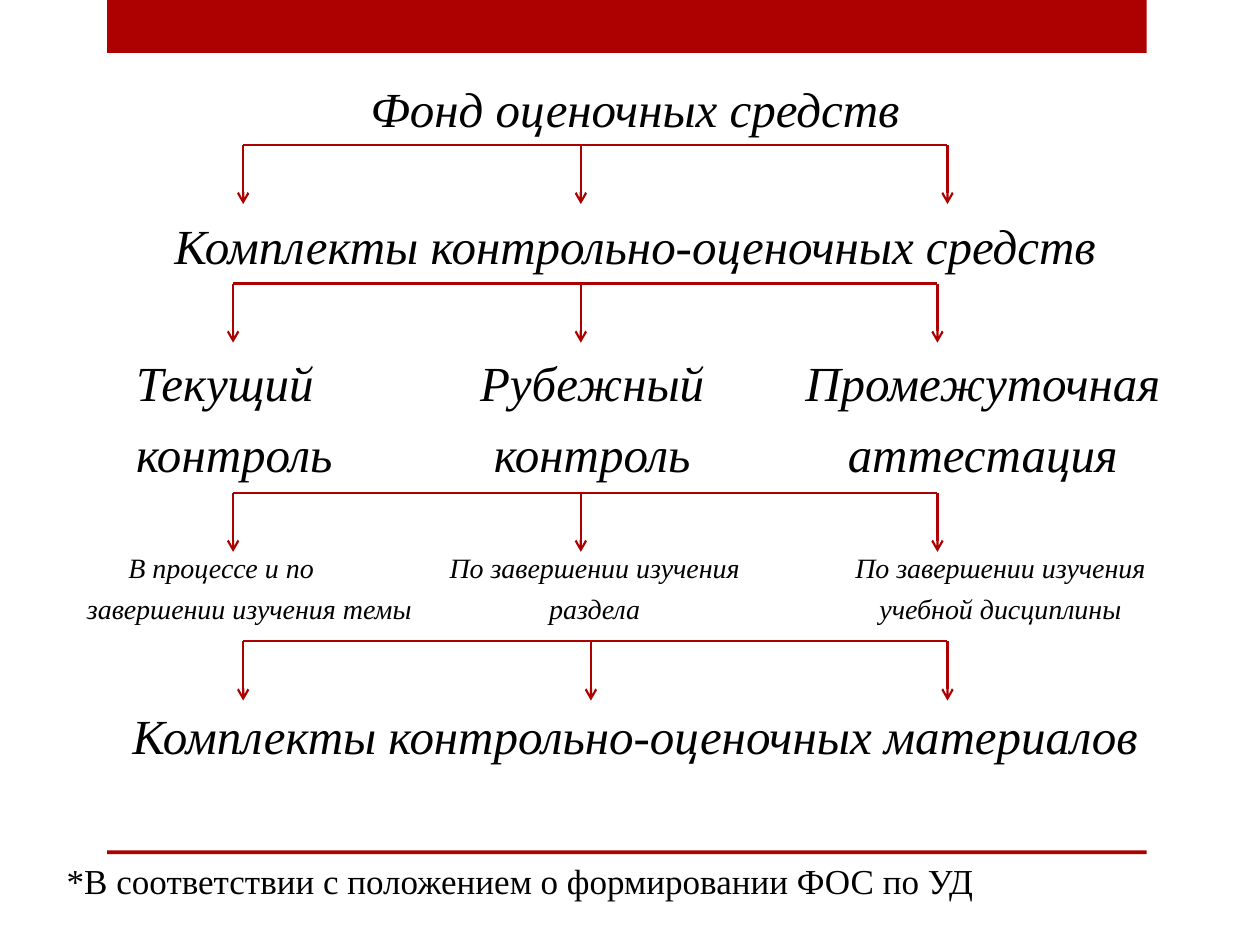
from lxml.etree import SubElement
from pptx import Presentation
from pptx.dml.color import RGBColor
from pptx.enum.shapes import MSO_CONNECTOR, MSO_SHAPE
from pptx.enum.text import PP_ALIGN
from pptx.oxml import parse_xml
from pptx.oxml.ns import nsdecls, qn
from pptx.util import Inches, Pt

RED = RGBColor(0xAD, 0x01, 0x01)
BLACK = RGBColor(0, 0, 0)
FONT = "Times New Roman"
LARGE, SMALL, NOTE = 28, 16, 20

# Grid of 100 columns by 75 rows
COLS, ROWS = 100, 75
CELL = Inches(0.1)

TEXT_SHADOW = (
    f'<a:effectLst {nsdecls("a")}>'
    '<a:outerShdw blurRad="38100" dist="38100" dir="2700000" algn="tl">'
    '<a:srgbClr val="000000"><a:alpha val="43000"/></a:srgbClr>'
    '</a:outerShdw></a:effectLst>'
)

# Headings: text, centre column, top row
HEADINGS = [
    ("Фонд оценочных средств", 50.4, 6.2),
    ("Комплекты контрольно-оценочных средств", 50.4, 17.1),
    ("Комплекты контрольно-оценочных материалов", 50.4, 56),
]

# Arrow trees: top row, columns of the three branches
TREES = [
    (11.5, (19.3, 46.1, 75.2)),
    (22.5, (18.5, 46.1, 74.4)),
    (39.1, (18.5, 46.1, 74.4)),
    (50.9, (19.3, 46.9, 75.2)),
]
BRANCH = 4.7


def grid(n):
    return round(n * CELL)


def add_text(slide, text, left, top, width, size=LARGE, italic=True,
             align=PP_ALIGN.CENTER, gap=0, indent=0, shadow=False):
    """Place text with its top left at a grid point; each line is a paragraph."""
    lines = text.split("\n")
    height = len(lines) * (size * 1.15 + gap) / 7.2
    box = slide.shapes.add_textbox(*map(grid, (left, top, width, height)))
    tf = box.text_frame
    tf.word_wrap = True
    tf.margin_left = tf.margin_right = tf.margin_top = tf.margin_bottom = 0
    for i, line in enumerate(lines):
        p = tf.paragraphs[0] if i == 0 else tf.add_paragraph()
        p.alignment = align
        if i:
            p.space_before = Pt(gap)
        elif indent:
            p._p.get_or_add_pPr().set("indent", str(grid(indent)))
        r = p.add_run()
        r.text = line
        r.font.size = Pt(size)
        r.font.italic = italic
        r.font.color.rgb = BLACK
        r.font.name = FONT
        if shadow:
            fill = r._r.rPr.find(qn("a:solidFill"))
            fill.addnext(parse_xml(TEXT_SHADOW))


def add_band(slide, top, height):
    sp = slide.shapes.add_shape(MSO_SHAPE.RECTANGLE,
                                *map(grid, (8.5, top, 82.5, height)))
    sp.shadow.inherit = False
    sp.fill.solid()
    sp.fill.fore_color.rgb = RED
    sp.line.fill.background()


def add_line(shapes, x1, y1, x2, y2, arrow=False):
    line = shapes.add_connector(MSO_CONNECTOR.STRAIGHT,
                                *map(grid, (x1, y1, x2, y2)))
    line.line.color.rgb = RED
    line.line.width = Pt(1.25)
    if arrow:
        SubElement(line.line._get_or_add_ln(), qn("a:tailEnd"), type="arrow")
    SubElement(line._element.spPr, qn("a:effectLst"))


def add_tree(slide, top, columns):
    """One horizontal bar with an arrow down from each column."""
    shapes = slide.shapes.add_group_shape().shapes
    add_line(shapes, columns[0], top, columns[-1], top)
    for x in columns:
        add_line(shapes, x, top, x, top + BRANCH, arrow=True)


def main():
    prs = Presentation()
    prs.slide_width, prs.slide_height = COLS * CELL, ROWS * CELL
    slide = prs.slides.add_slide(prs.slide_layouts[6])

    # Top band and bottom rule
    add_band(slide, 0, 4.2)
    add_band(slide, 67.5, 0.3)

    # Full-width headings
    for text, centre, top in HEADINGS:
        add_text(slide, text, centre - 44, top, 88)

    # Kinds of control
    kinds = dict(top=28, gap=7)
    add_text(slide, "Текущий\nконтроль", 10.8, width=20,
             align=PP_ALIGN.LEFT, **kinds)
    add_text(slide, "Рубежный\nконтроль", 37, width=20, **kinds)
    add_text(slide, "Промежуточная\nаттестация", 63, width=30, **kinds)

    # When each control takes place
    times = dict(top=43.7, size=SMALL, gap=4)
    add_text(slide, "В процессе и по\nзавершении изучения темы", 6.9, width=28,
             align=PP_ALIGN.LEFT, indent=3.3, **times)
    add_text(slide, "По завершении изучения\nраздела", 34.2, width=26, **times)
    add_text(slide, "По завершении изучения\nучебной дисциплины", 66.4,
             width=26, **times)

    # Arrows between the levels
    for top, columns in TREES:
        add_tree(slide, top, columns)

    # Footnote
    add_text(slide, "*В соответствии с положением о формировании ФОС по УД",
             5.3, 68.2, 84.6, size=NOTE, italic=False,
             align=PP_ALIGN.JUSTIFY, shadow=True)

    prs.save("out.pptx")


if __name__ == "__main__":
    main()
